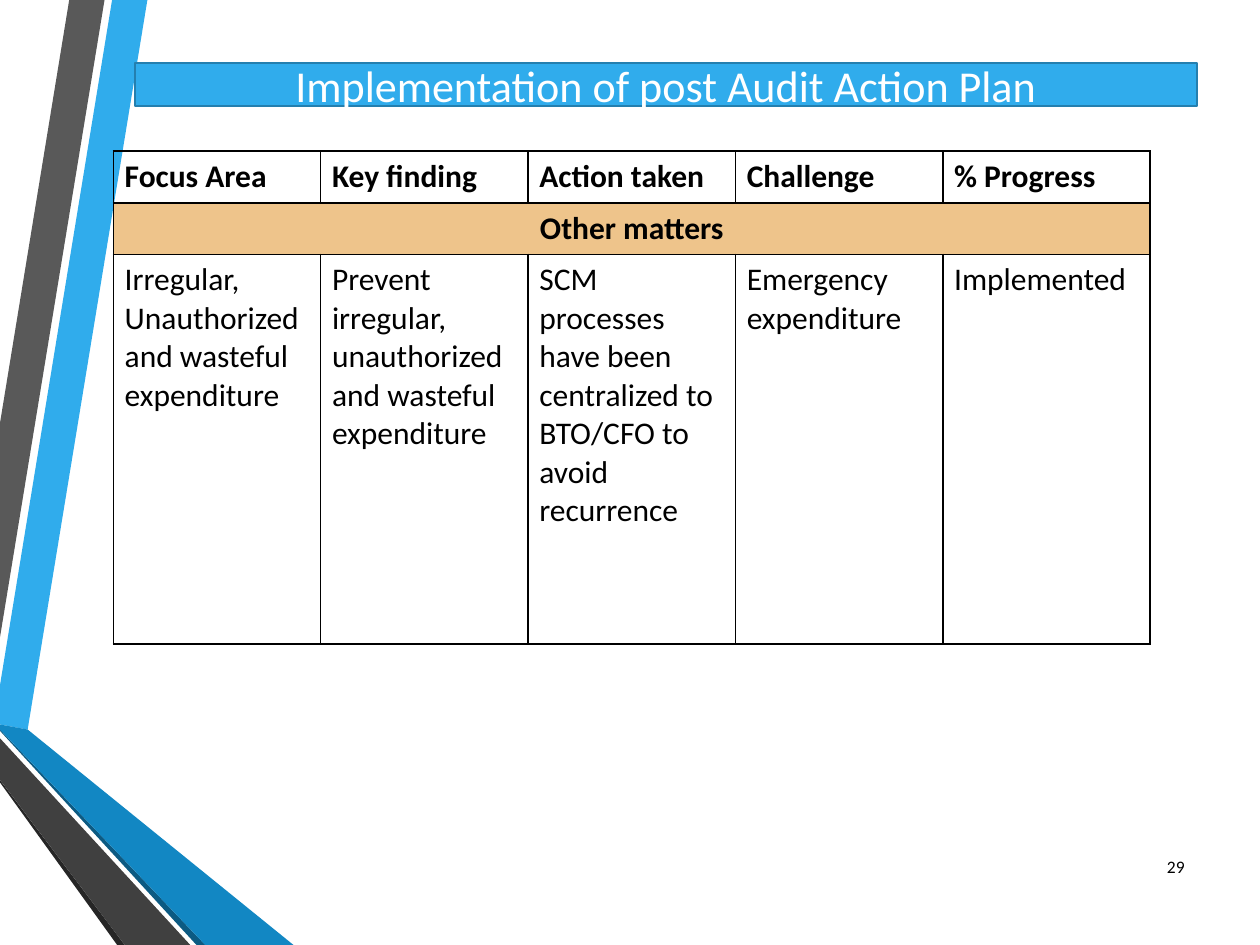
from lxml import etree
from pptx import Presentation
from pptx.dml.color import RGBColor
from pptx.enum import shapes, text
from pptx.oxml import ns
from pptx.util import Inches, Pt

COLORS = {
    "blue": "30ACEC", "mid blue": "1287C3", "deep blue": "0C5A82",
    "title edge": "247FAF", "gray": "595959", "dark gray": "404040",
    "near black": "262626", "sand": "EEC48B", "black": "000000", "white": "FFFFFF",
}
RIBBONS = [
    ("blue", [(0, 5.44), (0, 5.75), (0.22, 5.79), (1.17, 0), (0.89, 0)]),
    ("gray", [(0.83, 0), (0.55, 0), (0, 3.36), (0, 5.06)]),
    ("near black", [(0, 6.19), (0, 6.21), (0.93, 7.5), (0.99, 7.5)]),
    ("deep blue", [(0, 5.79), (0, 5.8), (1.56, 7.5), (1.63, 7.5)]),
    ("mid blue", [(0, 5.79), (1.63, 7.5), (2.33, 7.5), (0.22, 5.79), (0, 5.75)]),
    ("dark gray", [(0, 6.19), (0.99, 7.5), (1.51, 7.5), (0, 5.86)]),
]
ROWS = [
    ["Focus Area", "Key finding", "Action taken", "Challenge", "% Progress"],
    ["Other matters", "", "", "", ""],
    ["Irregular, Unauthorized and wasteful expenditure",
     "Prevent irregular, unauthorized and wasteful expenditure",
     "SCM processes have been centralized to BTO/CFO to avoid recurrence",
     "Emergency expenditure",
     "Implemented"],
]
ROW_HEIGHTS = [0.41, 0.41, 3.15 - 0.06]


def write(frame, words, size, color, align, bold=False):
    frame.text = words
    para = frame.paragraphs[0]
    para.alignment = align
    para.font.size = Pt(size)
    for span in para.runs:
        span.font.name = "Calibri"
        span.font.size = Pt(size)
        span.font.bold = bold
        span.font.color.rgb = RGBColor.from_string(COLORS[color])


def add_borders(cell, color, width):
    properties = cell._tc.get_or_add_tcPr()
    for index, side in enumerate(("lnL", "lnR", "lnT", "lnB")):
        line = etree.Element(ns.qn(f"a:{side}"), w=str(Pt(width)))
        fill = etree.SubElement(line, ns.qn("a:solidFill"))
        etree.SubElement(fill, ns.qn("a:srgbClr"), val=COLORS[color])
        properties.insert(index, line)


deck = Presentation()
deck.slide_width, deck.slide_height = Inches(10), Inches(7.5)
page = deck.slides.add_slide(deck.slide_layouts[6])

# Ribbons along the left edge
for color, points in RIBBONS:
    corners = [(Inches(x), Inches(y)) for x, y in points]
    builder = page.shapes.build_freeform(*corners[0])
    builder.add_line_segments(corners[1:], close=True)
    ribbon = builder.convert_to_shape()
    ribbon.shadow.inherit = False
    ribbon.fill.solid()
    ribbon.fill.fore_color.rgb = RGBColor.from_string(COLORS[color])
    ribbon.line.fill.background()

# Title bar
title = page.shapes.add_shape(shapes.MSO_SHAPE.RECTANGLE,
                              Inches(1.07), Inches(0.5), Inches(8.43), Inches(0.34))
title.shadow.inherit = False
title.fill.solid()
title.fill.fore_color.rgb = RGBColor.from_string(COLORS["blue"])
title.line.color.rgb = RGBColor.from_string(COLORS["title edge"])
title.line.width = Pt(1.25)
title.text_frame.vertical_anchor = text.MSO_ANCHOR.MIDDLE
write(title.text_frame, "Implementation of post Audit Action Plan", 25.2, "white",
      text.PP_ALIGN.CENTER)

# Action plan table
table = page.shapes.add_table(len(ROWS), len(ROWS[0]), Inches(0.9), Inches(1.2),
                              Inches(8.23), Inches(sum(ROW_HEIGHTS))).table
table.horz_banding = False
for row, height in zip(table.rows, ROW_HEIGHTS):
    row.height = Inches(height)
for r, words in enumerate(ROWS):
    is_section = r == 1
    align = text.PP_ALIGN.CENTER if is_section else text.PP_ALIGN.LEFT
    for c, word in enumerate(words):
        cell = table.cell(r, c)
        write(cell.text_frame, word, 18, "black", align, bold=r < 2)
        cell.margin_left = cell.margin_right = Inches(0.09)
        if is_section:
            cell.fill.solid()
            cell.fill.fore_color.rgb = RGBColor.from_string(COLORS["sand"])
        else:
            cell.fill.background()
        add_borders(cell, "black", 1)
table.cell(1, 0).merge(table.cell(1, len(ROWS[0]) - 1))

# Page number
number = page.shapes.add_textbox(Inches(9.03), Inches(6.68), Inches(0.47), Inches(0.4))
number.text_frame.word_wrap = True
number.text_frame.vertical_anchor = text.MSO_ANCHOR.MIDDLE
write(number.text_frame, "29", 10, "black", text.PP_ALIGN.RIGHT)

deck.save("out.pptx")
